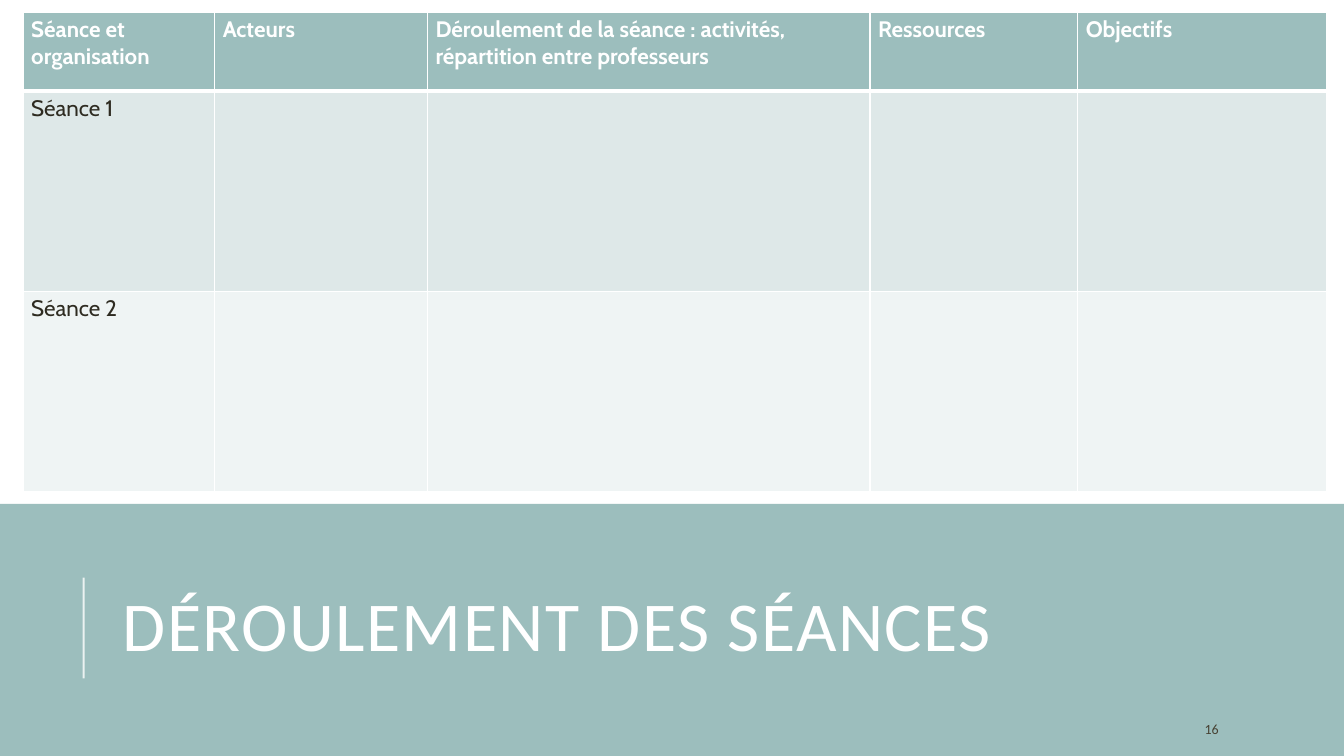
"""Builds the slide that lays out the teaching sessions in a table above a title band."""
from dataclasses import dataclass

import pptx
import pptx.dml.color
import pptx.enum.shapes
import pptx.enum.text
import pptx.oxml
import pptx.oxml.ns
import pptx.util

Inches = pptx.util.Inches
Pt = pptx.util.Pt


@dataclass(frozen=True)
class Theme:
    """Colours, fonts and type sizes of the slide."""
    teal: str = "9CBEBD"
    white: str = "FFFFFF"
    ink: str = "2E2B21"
    muted: str = "474233"
    bands: tuple = ("DEE8E8", "EFF4F4")
    heading_font: str = "Calibri"
    table_font: str = "Cabin"
    title_size: int = 50
    table_size: int = 16
    number_size: int = 10


THEME = Theme()
HEADERS = [
    "Séance et organisation",
    "Acteurs",
    "Déroulement de la séance : activités, répartition entre professeurs",
    "Ressources",
    "Objectifs",
]
SESSIONS = ["Séance 1", "Séance 2"]
COLUMN_WIDTHS = [1.9, 2.11, 4.39, 2.06, 2.47]
ROW_HEIGHTS = [0.78, 1.99, 1.99]


def rgb(colour):
    """Turn a hex string into a colour."""
    return pptx.dml.color.RGBColor.from_string(colour)


def style(font, name, size, colour, bold=False):
    """Set the look of a font."""
    font.name, font.size, font.bold = name, Pt(size), bold
    font.color.rgb = rgb(colour)


def add_band(page, left, top, width, height):
    """Add the plain rectangle behind the title."""
    band = page.shapes.add_shape(
        pptx.enum.shapes.MSO_SHAPE.RECTANGLE,
        Inches(left), Inches(top), Inches(width), Inches(height))
    band.shadow.inherit = False
    band.fill.solid()
    band.fill.fore_color.rgb = rgb(THEME.teal)
    band.line.fill.background()


def add_text(page, text, left, top, width, height, size, colour):
    """Add a vertically centred text box and return its paragraph."""
    box = page.shapes.add_textbox(
        Inches(left), Inches(top), Inches(width), Inches(height))
    box.text_frame.word_wrap = True
    box.text_frame.vertical_anchor = pptx.enum.text.MSO_ANCHOR.MIDDLE
    para = box.text_frame.paragraphs[0]
    para.text = text
    style(para.font, THEME.heading_font, size, colour)
    return para


def add_title(page, text):
    """Add the title with tight lines and slightly spaced letters."""
    para = add_text(page, text, 1.12, 5.44, 10.63, 1.64,
                    THEME.title_size, THEME.white)
    para.line_spacing = 0.8
    para.runs[0].font._element.set("spc", "100")


def add_rule(page, x, top, bottom):
    """Add the translucent vertical rule beside the title."""
    rule = page.shapes.add_connector(
        pptx.enum.shapes.MSO_CONNECTOR.STRAIGHT,
        Inches(x), Inches(bottom), Inches(x), Inches(top))
    rule.line.width = Pt(1.5)
    rule.line.color.rgb = rgb(THEME.white)
    properties = rule._element.spPr
    colour = properties.find(".//" + pptx.oxml.ns.qn("a:srgbClr"))
    pptx.oxml.ns.qn("a:alpha")
    colour.append(pptx.oxml.parse_xml(
        f'<a:alpha {pptx.oxml.ns.nsdecls("a")} val="80000"/>'))
    properties.append(pptx.oxml.parse_xml(
        f'<a:effectLst {pptx.oxml.ns.nsdecls("a")}/>'))


def set_borders(cell, widths):
    """Draw white borders, with widths in points keyed by side."""
    properties = cell._tc.get_or_add_tcPr()
    for side, width in widths.items():
        properties.append(pptx.oxml.parse_xml(
            f'<a:ln{side} {pptx.oxml.ns.nsdecls("a")} w="{Pt(width)}">'
            f'<a:solidFill><a:srgbClr val="{THEME.white}"/></a:solidFill>'
            f'</a:ln{side}>'))


def fill_cell(cell, text, row):
    """Write one cell and give it the look of its row."""
    header = row == 0
    set_borders(cell, {"L": 1, "R": 1, "T": 3 if row == 1 else 1,
                       "B": 3 if header else 1})
    cell.fill.solid()
    cell.fill.fore_color.rgb = rgb(THEME.teal if header else THEME.bands[row - 1])
    cell.margin_left = cell.margin_right = Inches(0.08)
    cell.margin_top = cell.margin_bottom = Inches(0.04)
    para = cell.text_frame.paragraphs[0]
    para.text = text
    style(para.font, THEME.table_font, THEME.table_size,
          THEME.white if header else THEME.ink, header)


def add_sessions_table(page, left, top):
    """Add the table with one row per session."""
    table = page.shapes.add_table(
        len(ROW_HEIGHTS), len(COLUMN_WIDTHS), Inches(left), Inches(top),
        Inches(sum(COLUMN_WIDTHS)), Inches(sum(ROW_HEIGHTS))).table
    for column, width in zip(table.columns, COLUMN_WIDTHS):
        column.width = Inches(width)
    for line, height in zip(table.rows, ROW_HEIGHTS):
        line.height = Inches(height)
    blanks = [""] * (len(HEADERS) - 1)
    contents = [HEADERS] + [[session] + blanks for session in SESSIONS]
    for row, texts in enumerate(contents):
        for column, text in enumerate(texts):
            fill_cell(table.cell(row, column), text, row)


def main():
    """Build and save the deck."""
    deck = pptx.Presentation()
    deck.slide_width, deck.slide_height = Inches(13.33), Inches(7.5)
    page = deck.slides.add_slide(deck.slide_layouts[6])
    add_band(page, 0, 5, 13.33, 2.5)
    add_title(page, "DÉROULEMENT DES SÉANCES")
    add_rule(page, 0.83, 5.73, 6.73)
    add_text(page, "16", 11.85, 7.08, 1.06, 0.3, THEME.number_size, THEME.muted)
    add_sessions_table(page, 0.23, 0.12)
    deck.save("out.pptx")


if __name__ == "__main__":
    main()
